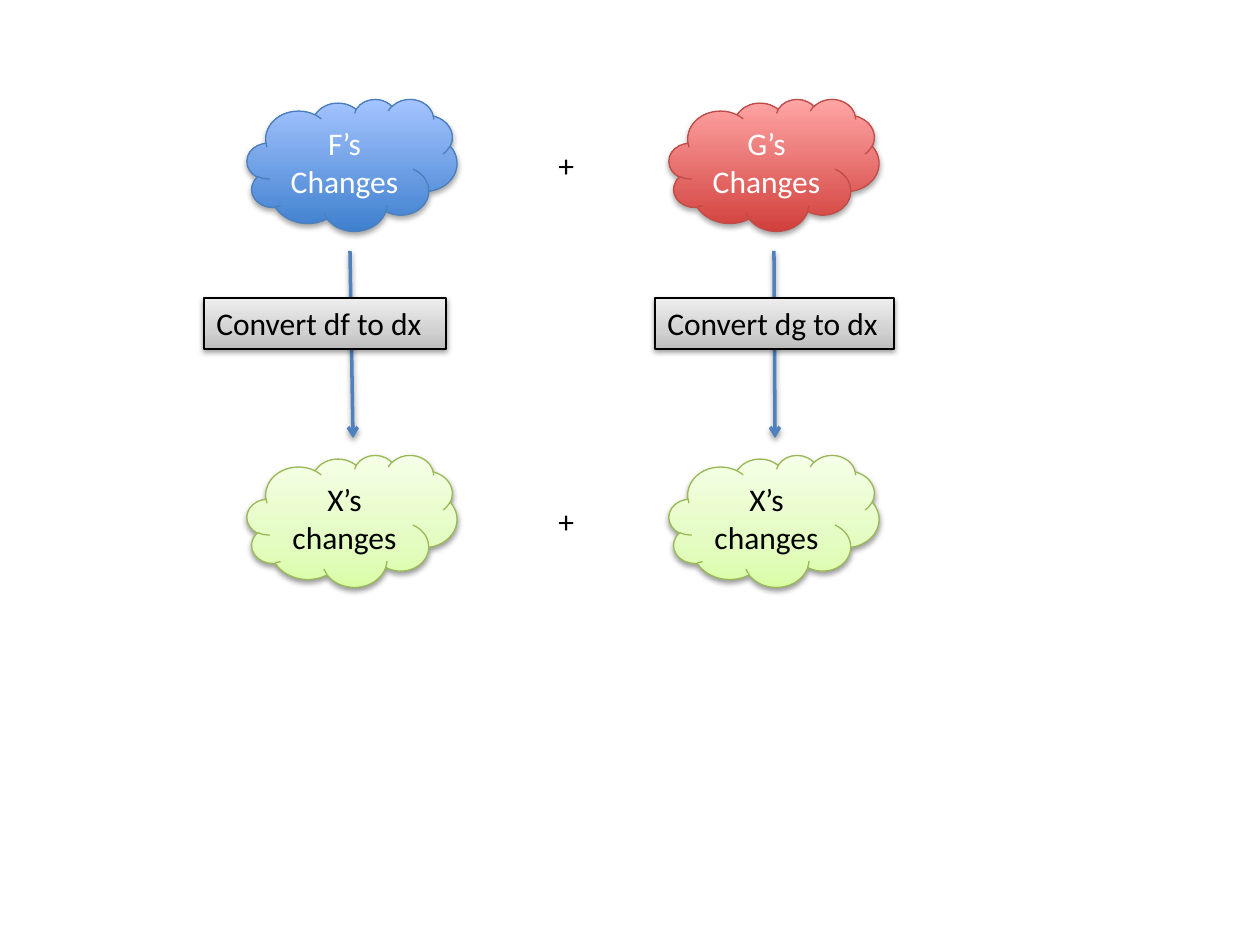
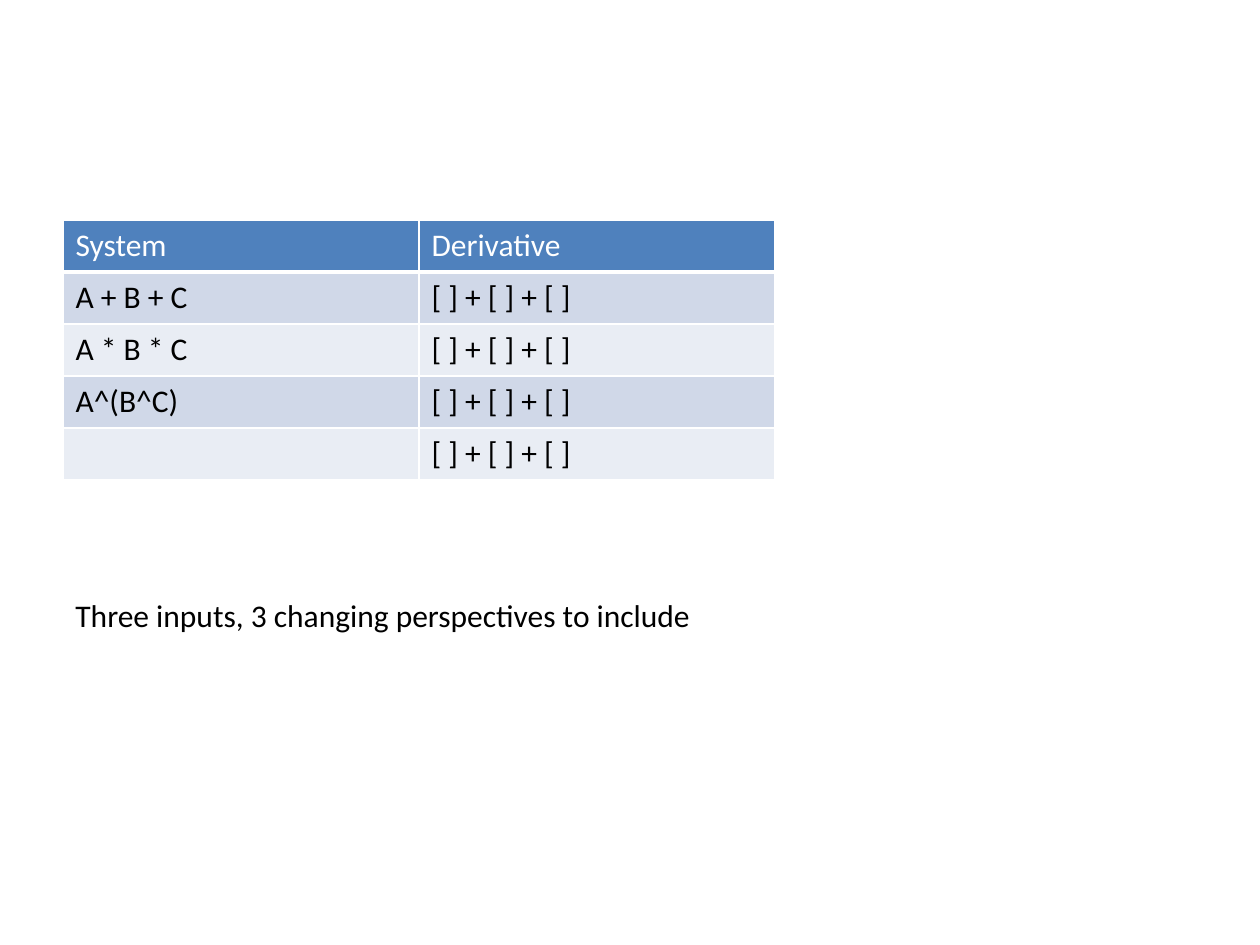
from dataclasses import dataclass

from lxml import etree
from pptx import Presentation
from pptx.dml.color import RGBColor
from pptx.enum.shapes import MSO_CONNECTOR, MSO_SHAPE
from pptx.enum.text import MSO_ANCHOR, MSO_AUTO_SIZE, PP_ALIGN
from pptx.oxml.ns import qn
from pptx.util import Emu, Pt

CLOUD = MSO_SHAPE.CLOUD
RECTANGLE = MSO_SHAPE.RECTANGLE
STRAIGHT = MSO_CONNECTOR.STRAIGHT
TOP, MIDDLE = MSO_ANCHOR.TOP, MSO_ANCHOR.MIDDLE
LEFT, CENTER = PP_ALIGN.LEFT, PP_ALIGN.CENTER
FIT_SHAPE = MSO_AUTO_SIZE.SHAPE_TO_FIT_TEXT

PX_PER_INCH = 126
SLIDE_SIZE = (1260, 945)


@dataclass(frozen=True)
class Paint:
    stops: tuple  # (position, colour), from bottom to top
    line: str
    text: str
    shadow: tuple = (38, 1.6)  # opacity in percent, distance in points


@dataclass(frozen=True)
class Theme:
    font: str = "Calibri"
    size: float = 18
    black: str = "000000"
    white: str = "FFFFFF"
    accent: str = "4F81BD"
    bands: tuple = ("D0D8E8", "E9EDF4")
    hairline: float = 0.75
    arrow_width: float = 2
    shadow_blur: float = 3.15
    blue: Paint = Paint(((0, "3F80CE"), (100, "A4C4FF")),
                        "4B7EBC", "FFFFFF", (35, 1.8))
    red: Paint = Paint(((0, "D1403C"), (100, "FFA6A5")),
                       "BF4C48", "FFFFFF", (35, 1.8))
    green: Paint = Paint(((0, "DAFDA7"), (35, "E4FCC2"), (100, "F5FFE7")),
                         "98B955", "000000")
    grey: Paint = Paint(((0, "BDBDBD"), (35, "D1D1D1"), (100, "EEEEEE")),
                        "000000", "000000")


THEME = Theme()


def px(length):
    return Emu(round(length * 914400 / PX_PER_INCH))


def rgb(colour):
    return RGBColor.from_string(colour)


def add_child(parent, tag, **attributes):
    values = {name: str(value) for name, value in attributes.items()}
    return etree.SubElement(parent, qn(tag), values)


def write(frame, text, colour, align=LEFT):
    para = frame.paragraphs[0]
    para.alignment = align
    span = para.add_run()
    span.text = text
    font = span.font
    font.name, font.size, font.bold = THEME.font, Pt(THEME.size), False
    font.color.rgb = rgb(colour)


def cast_shadow(item, opacity, distance):
    """Add a soft shadow below; call once fill and line are set."""
    effects = add_child(item._element.spPr, "a:effectLst")
    shadow = add_child(effects, "a:outerShdw", blurRad=Pt(THEME.shadow_blur),
                       dist=Pt(distance), dir=5400000, rotWithShape=0)
    colour = add_child(shadow, "a:srgbClr", val=THEME.black)
    add_child(colour, "a:alpha", val=opacity * 1000)


def add_painted(page, kind, box, paint):
    shape = page.shapes.add_shape(kind, *map(px, box))
    shape.fill.gradient()
    shape.fill.gradient_angle = 90
    stop_list = shape._element.spPr.find(".//" + qn("a:gsLst"))
    for stop in list(stop_list):
        stop_list.remove(stop)
    for position, colour in paint.stops:
        stop = add_child(stop_list, "a:gs", pos=position * 1000)
        add_child(stop, "a:srgbClr", val=colour)
    shape.line.color.rgb = rgb(paint.line)
    shape.line.width = Pt(THEME.hairline)
    cast_shadow(shape, *paint.shadow)
    return shape


def add_cloud(page, box, text, paint):
    frame = add_painted(page, CLOUD, box, paint).text_frame
    frame.word_wrap = True
    frame.vertical_anchor = MIDDLE
    write(frame, text, paint.text, CENTER)


def fit_text(frame, text):
    frame.word_wrap = False
    frame.auto_size = FIT_SHAPE
    frame.vertical_anchor = TOP
    write(frame, text, THEME.black)


def add_note(page, box, text):
    fit_text(page.shapes.add_textbox(*map(px, box)).text_frame, text)


def add_arrow(page, start, end):
    arrow = page.shapes.add_connector(STRAIGHT, *map(px, start + end))
    arrow.line.color.rgb = rgb(THEME.accent)
    arrow.line.width = Pt(THEME.arrow_width)
    add_child(arrow.line._get_or_add_ln(), "a:tailEnd", type="arrow")
    cast_shadow(arrow, *THEME.green.shadow)


def draw_conversion(page, box, source, paint, label, label_span, arrow_span):
    """One column: source cloud, arrow with its label, result cloud."""
    left, top, width, height = box
    cloud_height = 132
    result_top = top + height - cloud_height
    add_cloud(page, (left, top, width, cloud_height), source, paint)
    add_cloud(page, (left, result_top, width, cloud_height),
              "X’s changes", THEME.green)

    start, end = arrow_span
    add_arrow(page, (left + start, top + 152), (left + end, result_top - 17))
    offset, label_width = label_span
    plate = add_painted(page, RECTANGLE,
                        (left + offset, top + 199, label_width, 51), THEME.grey)
    fit_text(plate.text_frame, label)


def build_changes(deck):
    page = deck.slides.add_slide(deck.slide_layouts[6])
    top, width, height = 99, 210, 488
    columns = (
        (247, "F’s Changes", THEME.blue, "Convert df to dx", (-43, 242), (103, 106)),
        (669, "G’s Changes", THEME.red, "Convert dg to dx", (-14, 239), (105, 106)),
    )
    for left, *parts in columns:
        draw_conversion(page, (left, top, width, height), *parts)
    # Plus signs between the two columns
    for cloud_top in (top, top + 356):
        add_note(page, (546, cloud_top + 41, 42, 51), "+")


def add_borders(cell, bottom):
    properties = cell._tc.get_or_add_tcPr()
    widths = (("a:lnL", 1), ("a:lnR", 1), ("a:lnT", 1), ("a:lnB", bottom))
    for position, (side, width) in enumerate(widths):
        line = add_child(properties, side, w=Pt(width))
        fill = add_child(line, "a:solidFill")
        add_child(fill, "a:srgbClr", val=THEME.white)
        properties.insert(position, line)  # borders come before the fill


def draw_table(page, box, rows):
    left, top, column_width, row_height = box
    count = len(rows[0])
    table = page.shapes.add_table(
        len(rows), count, px(left), px(top),
        px(column_width * count), px(row_height * len(rows))).table
    for r, values in enumerate(rows):
        header = r == 0
        for c, value in enumerate(values):
            cell = table.cell(r, c)
            cell.fill.solid()
            cell.fill.fore_color.rgb = rgb(
                THEME.accent if header else THEME.bands[(r - 1) % 2])
            add_borders(cell, 3 if header else 1)
            if value:
                write(cell.text_frame, value,
                      THEME.white if header else THEME.black)


def build_derivatives(deck):
    page = deck.slides.add_slide(deck.slide_layouts[6])
    derivative = "[ ] + [ ] + [ ]"
    systems = ("A + B + C", "A * B * C", "A^(B^C)", "")
    rows = [("System", "Derivative")]
    rows += [(system, derivative) for system in systems]
    draw_table(page, (63, 220, 356, 52), rows)
    add_note(page, (63, 590, 648, 51),
             "Three inputs, 3 changing perspectives to include")


def main():
    deck = Presentation()
    deck.slide_width, deck.slide_height = map(px, SLIDE_SIZE)
    build_changes(deck)
    build_derivatives(deck)
    deck.save("out.pptx")


if __name__ == "__main__":
    main()
